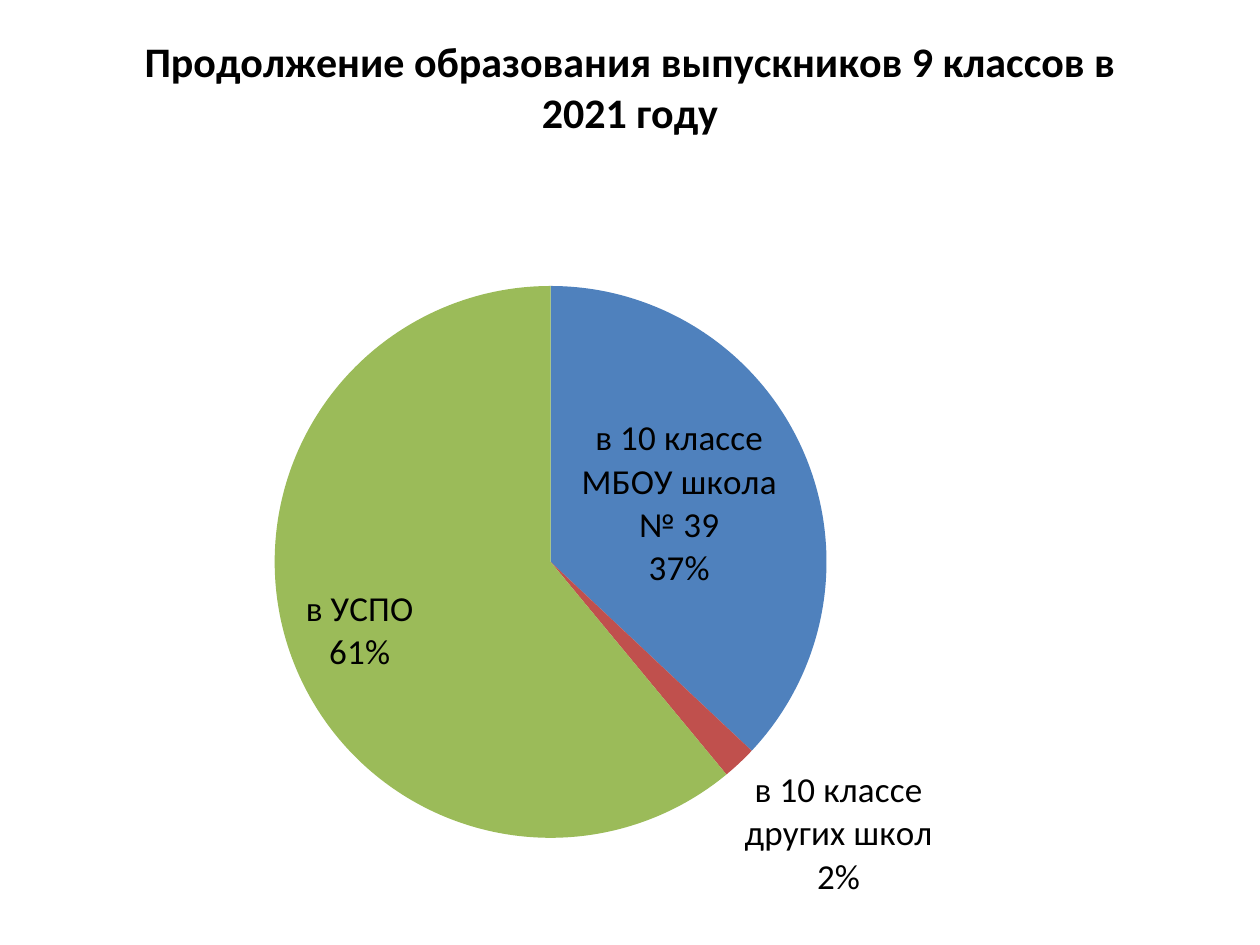
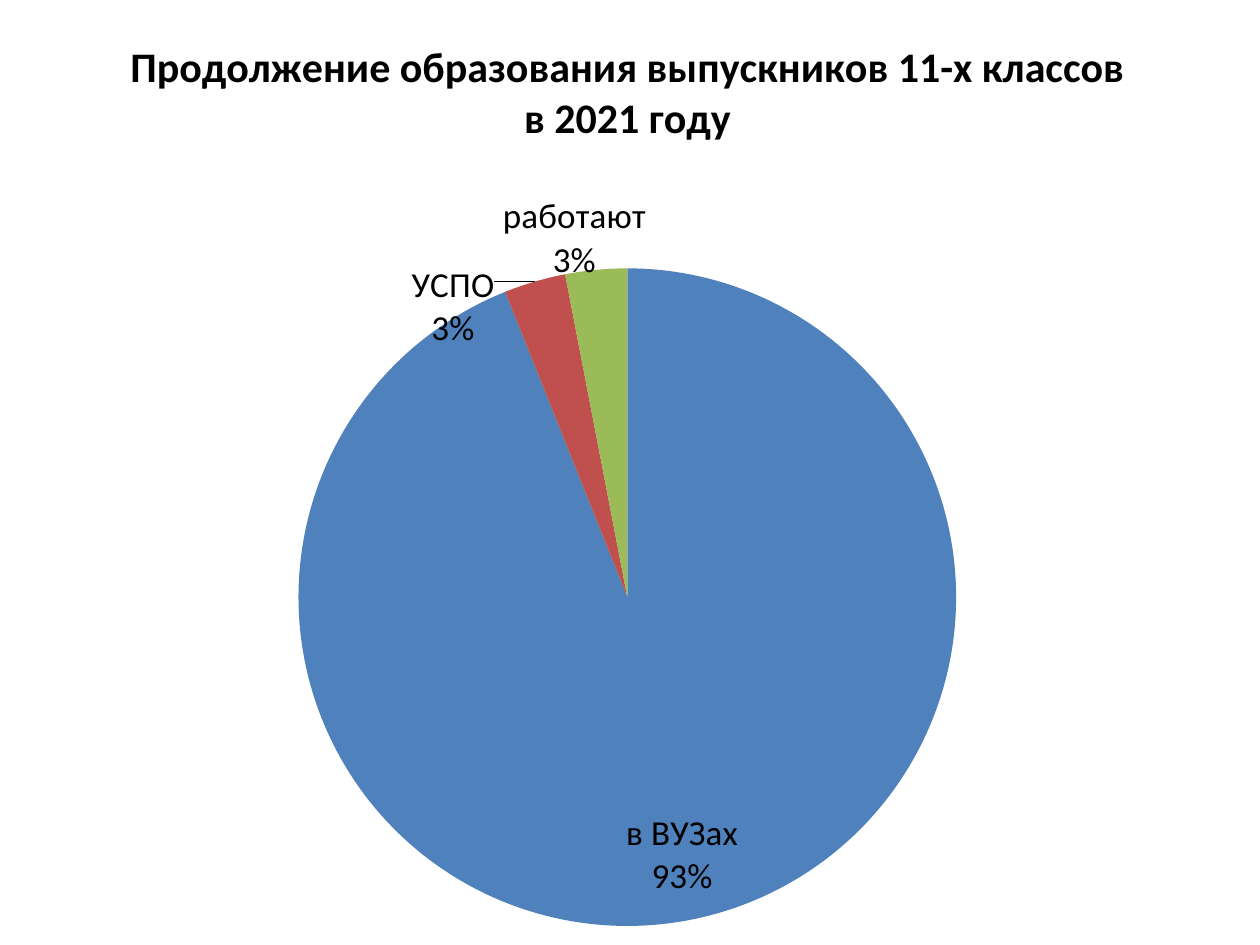
"""Build two pie-chart slides on where school leavers of 2021 continue their education."""
from dataclasses import dataclass, field

from pptx import Presentation
from pptx.chart.chart import Chart
from pptx.chart.data import CategoryChartData
from pptx.dml.color import RGBColor
from pptx.enum.chart import XL_CHART_TYPE, XL_LABEL_POSITION
from pptx.oxml import parse_xml
from pptx.oxml.ns import nsdecls
from pptx.util import Inches, Pt

PIE = XL_CHART_TYPE.PIE
BEST_FIT = XL_LABEL_POSITION.BEST_FIT

BLACK = RGBColor(0x00, 0x00, 0x00)
BLUE = RGBColor(0x4F, 0x81, 0xBD)
RED = RGBColor(0xC0, 0x50, 0x4D)
GREEN = RGBColor(0x9B, 0xBB, 0x59)
SLICE_COLOURS = (BLUE, RED, GREEN)

FONT = "Calibri"
LABEL_FORMAT = {"name": FONT, "size": Pt(20), "bold": False}
TITLE_FORMAT = {"name": FONT, "size": Pt(24), "bold": True}
PERCENT_FORMAT = '0"%"'


@dataclass(frozen=True)
class GraduatePie:
    """One slide: title, chart frame, pie circle in inches, shares and label shifts."""

    title: str
    frame: tuple[float, float, float, float]
    centre: tuple[float, float]
    radius: float
    shares: dict[str, int]
    rounded: bool = False
    label_shifts: dict[int, tuple[float, float]] = field(default_factory=dict)


PIES = (
    GraduatePie(
        title="Продолжение образования выпускников 9 классов в 2021 году",
        frame=(0, 0, 10, 7.5),
        centre=(4.37, 4.46),
        radius=2.19,
        shares={
            "в 10 классе МБОУ школа № 39": 37,
            "в 10 классе других школ": 2,
            "в УСПО": 61,
        },
    ),
    GraduatePie(
        title="Продолжение образования выпускников 11-х классов в 2021 году",
        frame=(-0.04, 0.04, 10.04, 7.46),
        centre=(4.98, 4.74),
        radius=2.61,
        shares={"в ВУЗах": 93, "УСПО": 3, "работают": 3},
        rounded=True,
        label_shifts={1: (-0.03, 0.08), 2: (0.04, 0.02)},
    ),
)


def apply_format(target: object, values: dict) -> None:
    """Set each format value on the target."""
    for name, value in values.items():
        setattr(target, name, value)


def style_title(chart: Chart, text: str) -> None:
    """Write the chart title in the shared title style."""
    chart.has_title = True
    chart.chart_title.include_in_layout = False
    frame = chart.chart_title.text_frame
    frame.text = text
    font = frame.paragraphs[0].runs[0].font
    apply_format(font, TITLE_FORMAT)
    font.color.rgb = BLACK


def place_circle(chart: Chart, pie: GraduatePie) -> None:
    """Fix the pie circle inside its chart frame."""
    left, top, width, height = pie.frame
    bounds = {
        "x": (pie.centre[0] - pie.radius - left) / width,
        "y": (pie.centre[1] - pie.radius - top) / height,
        "w": 2 * pie.radius / width,
        "h": 2 * pie.radius / height,
    }
    sizes = "".join(f'<c:{key} val="{value:.4f}"/>' for key, value in bounds.items())
    plot_area = chart.element.xpath("c:chart/c:plotArea")[0]
    for layout in plot_area.xpath("c:layout"):
        plot_area.remove(layout)
    plot_area.insert(0, parse_xml(
        f'<c:layout {nsdecls("c")}><c:manualLayout><c:layoutTarget val="inner"/>'
        f'<c:xMode val="edge"/><c:yMode val="edge"/>{sizes}</c:manualLayout></c:layout>'
    ))


def label_slices(chart: Chart, pie: GraduatePie) -> None:
    """Show the category above its share and shift the crowded labels."""
    series = chart.plots[0].series[0]
    shown = {
        "show_category_name": True,
        "show_value": pie.rounded,
        "show_percentage": not pie.rounded,
        "show_legend_key": False,
        "show_series_name": False,
        "number_format": PERCENT_FORMAT if pie.rounded else "0%",
        "number_format_is_linked": False,
        "position": BEST_FIT,
    }
    for index in pie.label_shifts:
        series.points[index].data_label.position = BEST_FIT
    labels = series.data_labels
    apply_format(labels, shown)
    apply_format(labels.font, LABEL_FORMAT)
    labels.font.color.rgb = BLACK

    group = chart.element.xpath(".//c:ser/c:dLbls")[0]
    for label, (x, y) in zip(group.xpath("c:dLbl"), pie.label_shifts.values()):
        for flag, value in (("showVal", pie.rounded), ("showCatName", True),
                            ("showPercent", not pie.rounded)):
            label.xpath(f"c:{flag}")[0].set("val", str(int(value)))
        position = label.xpath("c:dLblPos")[0]
        number_format = parse_xml(
            f'<c:numFmt {nsdecls("c")} formatCode="" sourceLinked="0"/>')
        number_format.set("formatCode", shown["number_format"])
        position.addprevious(number_format)
        label.insert(1, parse_xml(
            f'<c:layout {nsdecls("c")}><c:manualLayout>'
            f'<c:x val="{x}"/><c:y val="{y}"/></c:manualLayout></c:layout>'
        ))
    for owner in (group, *group.xpath("c:dLbl")):
        last_flag = owner.xpath("c:showBubbleSize|c:showPercent")[-1]
        last_flag.addnext(parse_xml(f'<c:separator {nsdecls("c")}>\n</c:separator>'))


def add_pie_slide(deck: Presentation, pie: GraduatePie) -> None:
    """Add a blank slide holding one titled pie chart."""
    slide = deck.slides.add_slide(deck.slide_layouts[6])
    data = CategoryChartData()
    data.categories = list(pie.shares)
    data.add_series("Series 1", list(pie.shares.values()))
    frame = [Inches(length) for length in pie.frame]
    chart = slide.shapes.add_chart(PIE, *frame, data).chart
    chart.has_legend = False
    chart.plots[0].vary_by_categories = True
    apply_format(chart.font, LABEL_FORMAT)
    chart.font.color.rgb = BLACK
    style_title(chart, pie.title)
    for index, colour in enumerate(SLICE_COLOURS):
        fill = chart.plots[0].series[0].points[index].format.fill
        fill.solid()
        fill.fore_color.rgb = colour
    place_circle(chart, pie)
    label_slices(chart, pie)


def main() -> None:
    """Build and save the deck."""
    deck = Presentation()
    deck.slide_width, deck.slide_height = Inches(10), Inches(7.5)
    for pie in PIES:
        add_pie_slide(deck, pie)
    deck.save("out.pptx")


if __name__ == "__main__":
    main()
